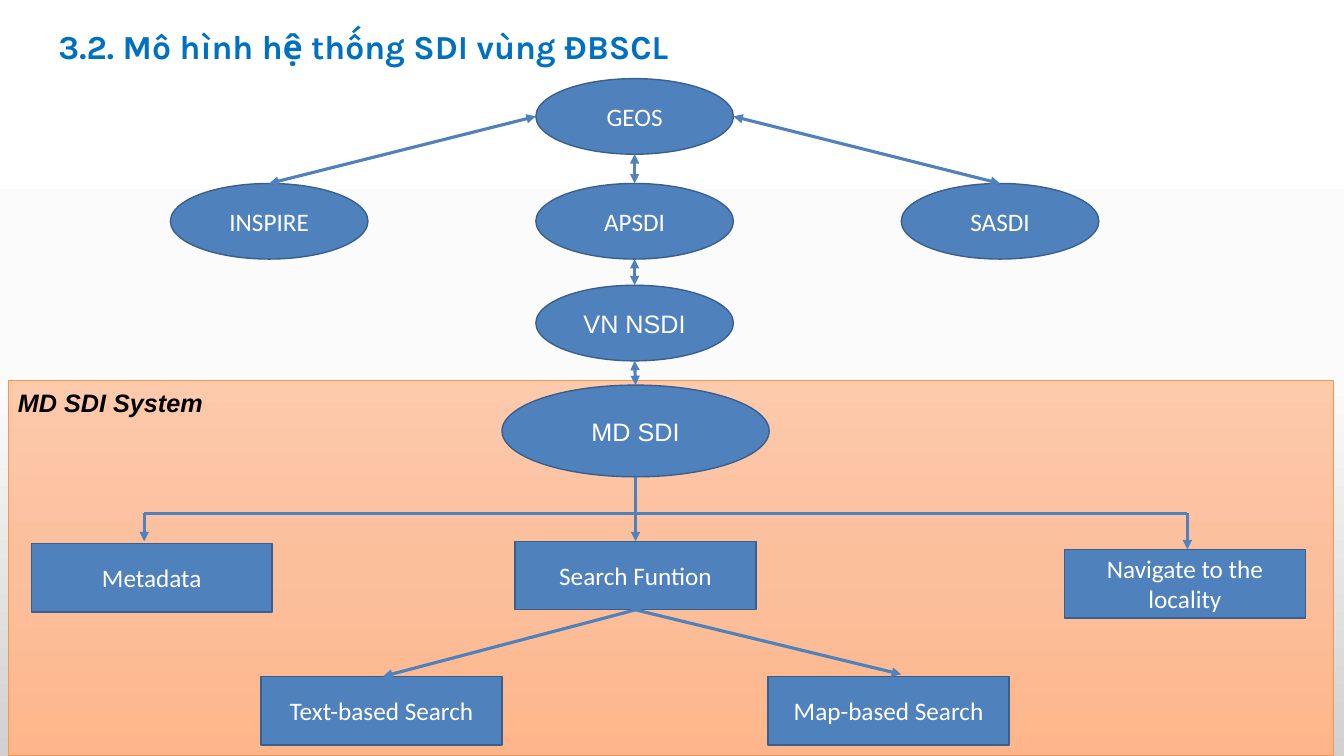
from copy import deepcopy
from dataclasses import dataclass

from lxml import etree
from pptx import Presentation
from pptx import util as u
from pptx.dml.color import RGBColor
from pptx.enum import shapes, text
from pptx.oxml.ns import qn

WIDTH, HEIGHT = u.Inches(13.33), u.Inches(7.5)
BLUE, EDGE, WHITE = "4F81BD", "3A5F8C", "FFFFFF"
OVAL, RECTANGLE = shapes.MSO_SHAPE.OVAL, shapes.MSO_SHAPE.RECTANGLE


@dataclass
class Box:
    """A region on a grid of 100 columns by 100 rows over the slide."""
    left: float
    top: float
    width: float
    height: float

    def area(self, left, top, width, height):
        return Box(self.left + left, self.top + top, width, height)

    def point(self, column, row):
        return self.left + column, self.top + row

    def side(self, across, down):
        return self.point(across * self.width, down * self.height)

    def lengths(self):
        return (*place(self.left, self.top), *place(self.width, self.height))


def place(column, row):
    return int(WIDTH * column / 100), int(HEIGHT * row / 100)


def color(value):
    return RGBColor.from_string(value)


def fill_gradient(fill, element, values):
    """Fill from top to bottom with evenly spaced colours."""
    fill.gradient()
    fill.gradient_angle = 270
    stop_list = next(element.iter(qn("a:gsLst")))
    while len(stop_list) < len(values):
        stop_list.append(deepcopy(stop_list[0]))
    for index, (stop, value) in enumerate(zip(fill.gradient_stops, values)):
        stop.position = index / (len(values) - 1)
        stop.color.rgb = color(value)


def write(paragraph, words, font_name, size, value, bold=False, italic=False):
    run = paragraph.add_run()
    run.text = words
    font = run.font
    font.name, font.size = font_name, u.Pt(size)
    font.bold, font.italic = bold, italic
    font.color.rgb = color(value)


def add_node(slide, box, kind, words, font_name="Calibri"):
    shape = slide.shapes.add_shape(kind, *box.lengths())
    shape.shadow.inherit = False
    shape.fill.solid()
    shape.fill.fore_color.rgb = color(BLUE)
    shape.line.color.rgb = color(EDGE)
    shape.line.width = u.Pt(1)
    frame = shape.text_frame
    frame.word_wrap = True
    frame.vertical_anchor = text.MSO_ANCHOR.MIDDLE
    frame.paragraphs[0].alignment = text.PP_ALIGN.CENTER
    write(frame.paragraphs[0], words, font_name, 18, WHITE)
    return box


def add_line(slide, start, end, *arrowheads):
    """Join two points; arrowheads are "headEnd" (start) and "tailEnd" (end)."""
    connector = slide.shapes.add_connector(
        shapes.MSO_CONNECTOR.STRAIGHT, *place(*start), *place(*end))
    connector.line.color.rgb = color(BLUE)
    connector.line.width = u.Pt(2.25)
    properties = connector._element.spPr
    outline = properties.find(qn("a:ln"))
    for arrowhead in arrowheads:
        etree.SubElement(outline, qn(f"a:{arrowhead}"), type="triangle")
    etree.SubElement(properties, qn("a:effectLst"))


def add_exchange(slide, start, end):
    add_line(slide, start, end, "headEnd", "tailEnd")


def add_title(slide, box):
    title = slide.shapes.title
    title.left, title.top, title.width, title.height = box.lengths()
    frame = title.text_frame
    frame.auto_size = text.MSO_AUTO_SIZE.NONE
    frame.vertical_anchor = text.MSO_ANCHOR.MIDDLE
    paragraph = frame.paragraphs[0]
    paragraph.alignment = text.PP_ALIGN.LEFT
    paragraph.line_spacing = 0.9
    write(paragraph, "3.2. Mô hình hệ thống SDI vùng ĐBSCL", "Karla", 24, "0070C0", bold=True)


def add_network(slide, box):
    """Draw the worldwide, regional and national levels; return the national node."""
    width, height = 14.7, 10
    pitch = (box.width - width) / 2
    regional_row, national_row = 13.87, box.height - height

    def add_oval(column, row, words, font_name="Calibri"):
        return add_node(slide, box.area(column * pitch, row, width, height),
                        OVAL, words, font_name)

    inspire, apsdi, sasdi = [add_oval(column, regional_row, words) for column, words
                             in enumerate(("INSPIRE", "APSDI", "SASDI"))]
    geos = add_oval(1, 0, "GEOS")
    national = add_oval(1, national_row, "VN NSDI", "Arial")
    add_exchange(slide, inspire.side(0.5, 0), geos.side(0, 0.5))
    add_exchange(slide, geos.side(0.5, 1), apsdi.side(0.5, 0))
    add_exchange(slide, geos.side(1, 0.5), sasdi.side(0.5, 0))
    add_exchange(slide, apsdi.side(0.5, 1), national.side(0.5, 0))
    return national


def add_system(slide, box):
    """Draw the panel of the MD SDI system; return its main node."""
    panel = slide.shapes.add_shape(RECTANGLE, *box.lengths())
    panel.shadow.inherit = False
    fill_gradient(panel.fill, panel._element, ("FDCAAC", "FBBF9C", "FFB68A"))
    panel.line.color.rgb = color("F79646")
    panel.line.width = u.Pt(0.5)

    label = slide.shapes.add_textbox(*box.area(0, 0.27, 21.75, 5.33).lengths())
    label.text_frame.word_wrap = True
    write(label.text_frame.paragraphs[0], "MD SDI System", "Arial", 18, "000000",
          bold=True, italic=True)

    main_node = add_node(slide, box.area(36.75, 0.67, 19.88, 12.13), OVAL, "MD SDI", "Arial")
    for column, row, words in (
            (1.72, 21.6, "Metadata"),
            (37.72, 21.33, "Search Funtion"),
            (78.6, 22.4, "Navigate to the locality"),
            (56.55, 39.2, "Map-based Search"),
            (18.82, 39.2, "Text-based Search")):
        add_node(slide, box.area(column, row, 17.93, 9.07), RECTANGLE, words)

    left, middle, right = 10.13, 46.69, 87.75
    bus_row = 17.6
    add_line(slide, box.point(left, bus_row), box.point(right, bus_row))
    for start, end in (
            ((left, bus_row), (left, 21.33)),
            ((middle, 12.8), (middle, 21.33)),
            ((right, bus_row), (right, 22.4)),
            ((middle, 30.4), (27.9, 39.2)),
            ((middle, 30.4), (66.45, 38.93))):
        add_line(slide, box.point(*start), box.point(*end), "tailEnd")
    return main_node


def main():
    presentation = Presentation()
    presentation.slide_width, presentation.slide_height = WIDTH, HEIGHT
    slide = presentation.slides.add_slide(presentation.slide_layouts.get_by_name("Title Only"))
    fill_gradient(slide.background.fill, slide._element, ("FFFFFF", "FBFBFB", "D1D1D1"))
    add_title(slide, Box(3.6, 2, 90.77, 8.8))
    national = add_network(slide, Box(12.68, 10.4, 69.08, 37.33))
    main_node = add_system(slide, Box(0.6, 50.27, 98.63, 49.6))
    add_exchange(slide, national.side(0.5, 1), main_node.side(0.5, 0))
    presentation.save("out.pptx")


if __name__ == "__main__":
    main()
